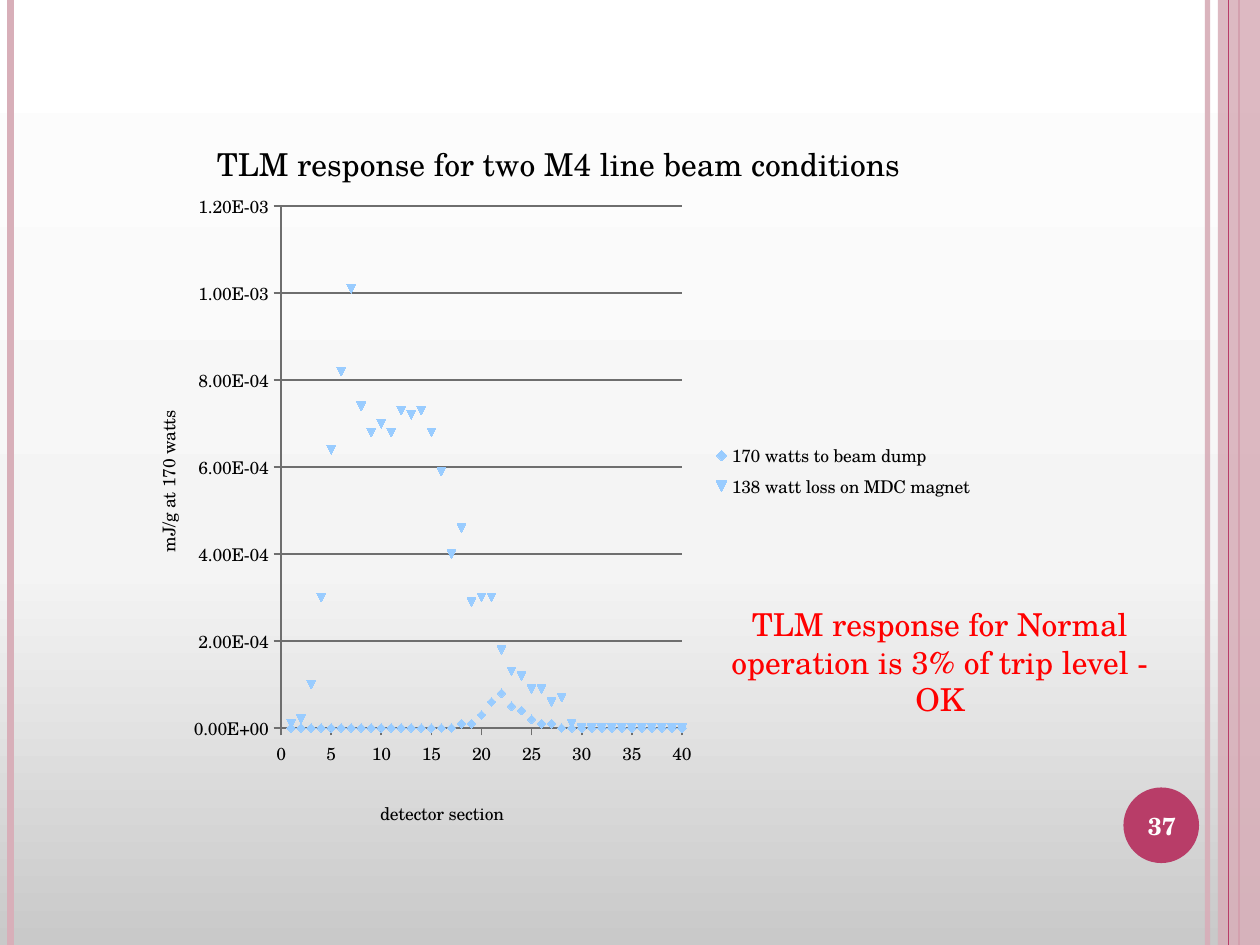
from copy import deepcopy

from pptx import Presentation
from pptx.chart.data import XyChartData
from pptx.dml.color import RGBColor
from pptx.enum.chart import XL_CHART_TYPE as CHART, XL_LEGEND_POSITION as LEGEND
from pptx.enum.chart import XL_MARKER_STYLE as MARKER, XL_TICK_MARK as TICK
from pptx.enum.shapes import MSO_CONNECTOR as CONN, MSO_SHAPE as SHAPE
from pptx.enum.text import MSO_ANCHOR as ANCHOR, PP_ALIGN as ALIGN
from pptx.oxml.ns import qn
from pptx.oxml.xmlchemy import OxmlElement
from pptx.util import Pt

FONT = "TeX Gyre Schola"
COLORS = {
    "pink": "D8AFB9", "berry": "B83D68", "white": "FFFFFF", "black": "000000",
    "red": "FF0000", "marker": "99CCFF", "axis": "6E6E6E",
    "bg_low": "C9C9C9", "bg_mid": "F4F4F4",
}
BEAM_DUMP = [0] * 17 + [1, 1, 3, 6, 8, 5, 4, 2, 1, 1] + [0] * 13
MAGNET_LOSS = [1, 2, 10, 30, 64, 82, 101, 74, 68, 70, 68, 73, 72, 73, 68, 59, 40,
               46, 29, 30, 30, 18, 13, 12, 9, 9, 6, 7, 1] + [0] * 11
SERIES = [("170 watts to beam dump", BEAM_DUMP),
          ("138 watt loss on MDC magnet", MAGNET_LOSS)]


def rgb(name):
    return RGBColor.from_string(COLORS[name])


def set_alpha(fill_parent, percent):
    for clr in fill_parent.iter(qn("a:srgbClr")):
        alpha = OxmlElement("a:alpha")
        alpha.set("val", str(percent * 1000))
        clr.append(alpha)


def set_background(s):
    fill = s.background.fill
    fill.gradient()
    fill.gradient_angle = 90
    first = s._element.find(".//" + qn("a:gs"))
    first.addnext(deepcopy(first))
    stops = [(0, "bg_low"), (0.4, "bg_mid"), (1, "white")]
    for stop, (position, color) in zip(fill.gradient_stops, stops):
        stop.position = position
        stop.color.rgb = rgb(color)


def add_rule(s, x, color, width, alpha=100):
    line = s.shapes.add_connector(CONN.STRAIGHT, Pt(x), Pt(0), Pt(x), Pt(540))
    line.line.color.rgb = rgb(color)
    line.line.width = Pt(width)
    spPr = line._element.spPr
    if alpha < 100:
        set_alpha(spPr, alpha)
    spPr.append(OxmlElement("a:effectLst"))


def add_solid(s, kind, box, color, alpha=100):
    sp = s.shapes.add_shape(kind, *map(Pt, box))
    sp.shadow.inherit = False
    sp.fill.solid()
    sp.fill.fore_color.rgb = rgb(color)
    sp.line.fill.background()
    if alpha < 100:
        set_alpha(sp._element.spPr, alpha)


def style_font(font, size, color="black", bold=False):
    font.name = FONT
    font.size = Pt(size)
    font.bold = bold
    font.color.rgb = rgb(color)


def add_text(s, box, lines, size, color, bold=False, anchor=ANCHOR.TOP):
    tf = s.shapes.add_textbox(*map(Pt, box)).text_frame
    tf.word_wrap = True
    tf.vertical_anchor = anchor
    for i, line in enumerate(lines):
        p = tf.add_paragraph() if i else tf.paragraphs[0]
        p.alignment = ALIGN.CENTER
        r = p.add_run()
        r.text = line
        style_font(r.font, size, color, bold)


def place(element, index, **fractions):
    for old in element.findall(qn("c:layout")):
        element.remove(old)
    layout = OxmlElement("c:layout")
    manual = OxmlElement("c:manualLayout")
    layout.append(manual)
    settings = {"xMode": "edge", "yMode": "edge", **fractions}
    if element.tag == qn("c:plotArea"):
        settings = {"layoutTarget": "inner", **settings}
    for key, value in settings.items():
        item = OxmlElement("c:" + key)
        item.set("val", str(value))
        manual.append(item)
    element.insert(index, layout)


def add_title(title, text, size, x, y):
    r = title.text_frame.paragraphs[0].add_run()
    r.text = text
    style_font(r.font, size)
    place(title._element, 1, x=x, y=y)


def style_axis(axis, maximum, step, number_format, grid):
    axis.minimum_scale = 0
    axis.maximum_scale = maximum
    axis.major_unit = step
    axis.major_tick_mark = TICK.OUTSIDE
    axis.minor_tick_mark = TICK.NONE
    axis.has_major_gridlines = grid
    axis.tick_labels.number_format = number_format
    axis.tick_labels.number_format_is_linked = False
    style_font(axis.tick_labels.font, 10)
    lines = [axis.format.line]
    if grid:
        lines.append(axis.major_gridlines.format.line)
    for line in lines:
        line.color.rgb = rgb("axis")
        line.width = Pt(1)


def add_scatter(s, box):
    data = XyChartData()
    for name, values in SERIES:
        series = data.add_series(name)
        for section, value in enumerate(values, 1):
            series.add_data_point(section, round(value * 1e-5, 5))
    chart = s.shapes.add_chart(CHART.XY_SCATTER, *map(Pt, box), data).chart
    style_font(chart.font, 10)
    chart.plots[0].vary_by_categories = False
    for series in chart.plots[0].series:
        series.smooth = False
        series.format.line.fill.background()
        marker = series.marker
        marker.style = MARKER.AUTOMATIC
        marker.size = 5
        marker.format.fill.solid()
        marker.format.fill.fore_color.rgb = rgb("marker")
        marker.format.line.color.rgb = rgb("marker")

    x_axis, y_axis = chart.category_axis, chart.value_axis
    style_axis(x_axis, 40, 5, "General", False)
    style_axis(y_axis, 0.0012, 0.0002, "0.00E+00", True)
    add_title(chart.chart_title, "TLM response for two M4 line beam conditions",
              18, 0.11, 0.05)
    add_title(x_axis.axis_title, "detector section ", 10, 0.3, 0.94)
    add_title(y_axis.axis_title, "mJ/g at 170 watts", 10, 0.04, 0.42)
    chart.has_legend = True
    chart.legend.position = LEGEND.RIGHT
    chart.legend.include_in_layout = False
    style_font(chart.legend.font, 10)
    place(chart.legend._element, 1, x=0.68, y=0.46, w=0.31, h=0.09)
    plot_area = chart._chartSpace.find(".//" + qn("c:plotArea"))
    place(plot_area, 0, x=0.19, y=0.15, w=0.46, h=0.7)


def main():
    prs = Presentation()
    prs.slide_width, prs.slide_height = Pt(720), Pt(540)
    s = prs.slides.add_slide(prs.slide_layouts[6])
    set_background(s)
    add_rule(s, 690, "pink", 3, 93)
    add_rule(s, 6, "pink", 4.5)
    add_rule(s, 708, "berry", 1.5)
    add_solid(s, SHAPE.RECTANGLE, (696, 0, 24, 540), "pink", 87)
    add_rule(s, 702, "berry", 0.75)
    add_solid(s, SHAPE.OVAL, (642, 450, 43.2, 43.2), "berry")
    add_text(s, (640, 451.2, 48, 41), ["37"], 14, "white", True, ANCHOR.MIDDLE)
    add_scatter(s, (66, 54, 498, 426))
    add_text(s, (402, 342, 270, 73),
             ["TLM response for Normal", "operation is 3% of trip level - OK"], 18, "red")
    prs.save("out.pptx")


if __name__ == "__main__":
    main()
